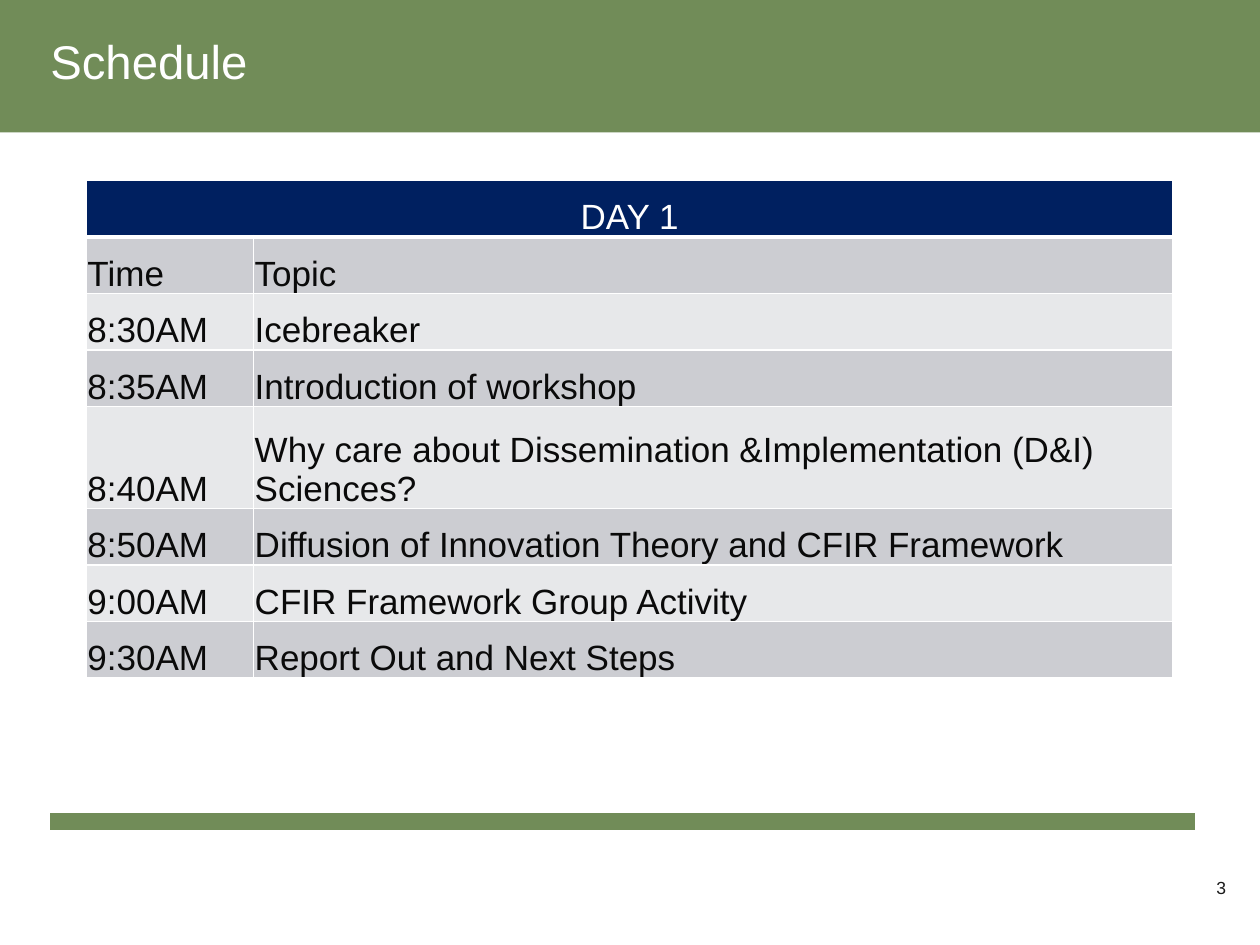
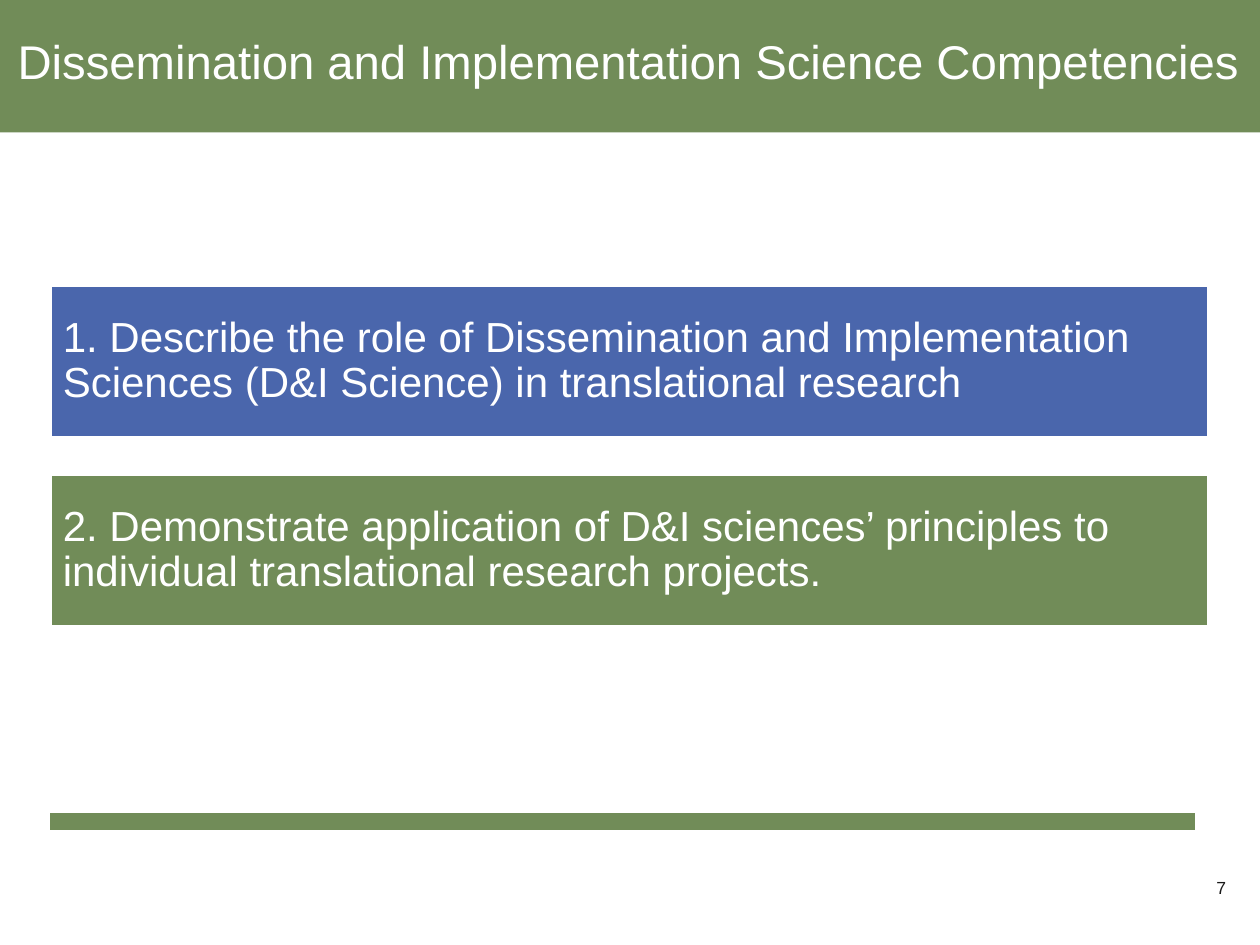
"""Build the workshop schedule and competencies slides."""
import pptx
import pptx.util
import pptx.dml.color
import pptx.enum.shapes
import pptx.enum.text
import pptx.oxml
import pptx.oxml.ns

Pt = pptx.util.Pt
RGBColor = pptx.dml.color.RGBColor
Align = pptx.enum.text.PP_ALIGN
Anchor = pptx.enum.text.MSO_ANCHOR
RECTANGLE = pptx.enum.shapes.MSO_SHAPE.RECTANGLE
STRAIGHT = pptx.enum.shapes.MSO_CONNECTOR.STRAIGHT
NAMESPACE = pptx.oxml.ns.nsdecls("a")

GREEN = RGBColor(0x71, 0x8C, 0x58)
BLUE = RGBColor(0x4A, 0x66, 0xAC)
NAVY = RGBColor(0x00, 0x20, 0x60)
DARK_ROW = RGBColor(0xCC, 0xCD, 0xD2)
LIGHT_ROW = RGBColor(0xE7, 0xE8, 0xEA)
WHITE = RGBColor(0xFF, 0xFF, 0xFF)
INK = RGBColor(0x0A, 0x0A, 0x0A)
NUMBER_INK = RGBColor(0x1A, 0x1A, 0x1A)
FONT = "Arial"
MARGIN = 28.8


def write(frame, text, size, color, align=Align.LEFT, insets=(0, 0, 0, 0)):
    frame.word_wrap = True
    frame.margin_left, frame.margin_top, frame.margin_right, frame.margin_bottom = map(Pt, insets)
    para = frame.paragraphs[0]
    para.text = text
    para.alignment = align
    para.font.name = FONT
    para.font.size = Pt(size)
    para.font.color.rgb = color
    return para


def add_page(title, title_left, title_width, number):
    page = deck.slides.add_slide(deck.slide_layouts[6])
    number_box = page.shapes.add_textbox(Pt(687.6), Pt(501.1), Pt(13), Pt(15.8))
    write(number_box.text_frame, number, 10, NUMBER_INK, Align.RIGHT)

    rule = page.shapes.add_connector(STRAIGHT, Pt(MARGIN), Pt(469.4), Pt(682.6), Pt(469.4))
    rule.line.color.rgb = GREEN
    rule.line.width = Pt(10)
    rule._element.spPr.append(pptx.oxml.parse_xml(f"<a:effectLst {NAMESPACE}/>"))

    band = page.shapes.add_shape(RECTANGLE, 0, Pt(-2.9), Pt(720), Pt(78.5))
    band.shadow.inherit = False
    band.fill.solid()
    band.fill.fore_color.rgb = GREEN
    band.line.fill.background()

    title_box = page.shapes.add_textbox(Pt(title_left), Pt(15.1), Pt(title_width), Pt(74.2))
    write(title_box.text_frame, title, 27, WHITE, insets=(0, 3.6, 0, 3.6))
    return page


deck = pptx.Presentation()
deck.slide_width = Pt(720)
deck.slide_height = Pt(540)

schedule_page = add_page("Schedule", MARGIN, 504, "3")
schedule = [
    ("DAY 1", ""),
    ("Time", "Topic"),
    ("8:30AM", "Icebreaker"),
    ("8:35AM", "Introduction of workshop"),
    ("8:40AM", "Why care about Dissemination &Implementation (D&I) Sciences?"),
    ("8:50AM", "Diffusion of Innovation Theory and CFIR Framework"),
    ("9:00AM", "CFIR Framework Group Activity"),
    ("9:30AM", "Report Out and Next Steps"),
]
TWO_LINE_ROW = 4
table = schedule_page.shapes.add_table(
    len(schedule), 2, Pt(49.3), Pt(103.2), Pt(621.1), Pt(284.4)).table
table.columns[0].width = Pt(95.6)
table.columns[1].width = Pt(525.5)
table.cell(0, 0).merge(table.cell(0, 1))

for row_index, entries in enumerate(schedule):
    is_header = row_index == 0
    table.rows[row_index].height = Pt(58.3 if row_index == TWO_LINE_ROW else 32.3)
    for column_index, entry in enumerate(entries):
        cell = table.cell(row_index, column_index)
        for side in "LRTB":
            width = 3 if is_header and side == "B" else 1
            cell._tc.get_or_add_tcPr().append(pptx.oxml.parse_xml(
                f'<a:ln{side} {NAMESPACE} w="{int(Pt(width))}">'
                f'<a:solidFill><a:srgbClr val="{WHITE}"/></a:solidFill></a:ln{side}>'))
        cell.fill.solid()
        cell.fill.fore_color.rgb = NAVY if is_header else DARK_ROW if row_index % 2 else LIGHT_ROW
        cell.vertical_anchor = Anchor.BOTTOM
        cell.margin_left = cell.margin_top = cell.margin_right = Pt(0.7)
        cell.margin_bottom = 0
        if entry:
            write(cell.text_frame, entry, 20, WHITE if is_header else INK,
                  Align.CENTER if is_header else Align.LEFT, (0.7, 0.7, 0.7, 0))

competency_page = add_page(
    "Dissemination and Implementation Science Competencies", 10.1, 709.9, "7")
competencies = [
    ("1. Describe the role of Dissemination and Implementation Sciences (D&I Science) "
     "in translational research", BLUE),
    ("2. Demonstrate application of D&I sciences’ principles to individual "
     "translational research projects.", GREEN),
]
for index, (competency, color) in enumerate(competencies):
    box = competency_page.shapes.add_shape(
        RECTANGLE, Pt(MARGIN), Pt(162.8 + 108 * index), Pt(661.7), Pt(87.1))
    box.shadow.inherit = False
    box.fill.solid()
    box.fill.fore_color.rgb = color
    box.line.color.rgb = WHITE
    box.line.width = Pt(2)
    box.text_frame.vertical_anchor = Anchor.MIDDLE
    para = write(box.text_frame, competency, 24, WHITE, insets=(7.2, 7.2, 7.2, 7.2))
    para.line_spacing = 0.9
    para.space_after = Pt(8.4)

deck.save("out.pptx")
